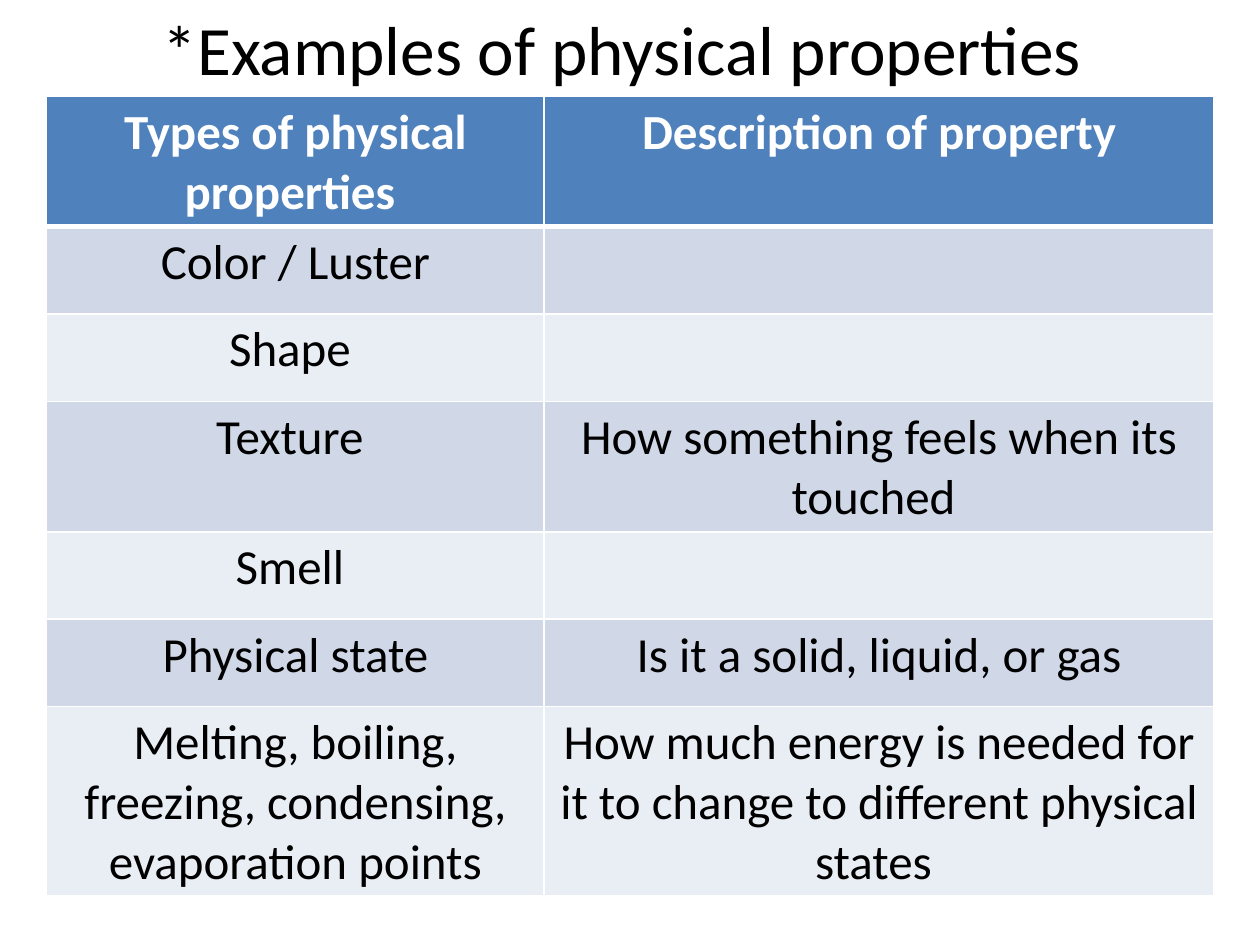
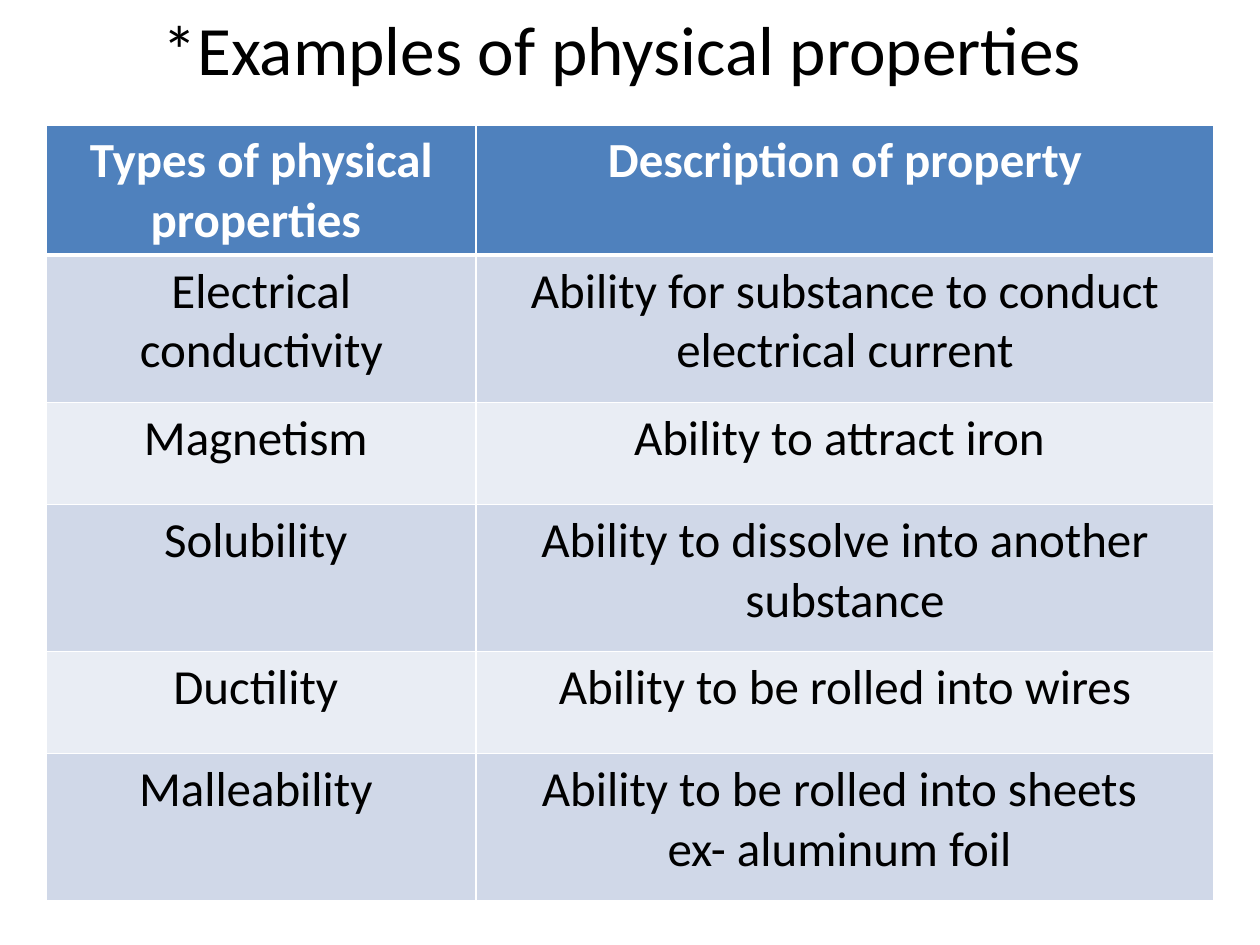
"""Build two slides with tables of physical properties."""
from dataclasses import dataclass

from lxml.etree import SubElement
from pptx import Presentation
from pptx.dml.color import RGBColor as Rgb
from pptx.enum.text import MSO_ANCHOR as Anchor, PP_ALIGN as Align
from pptx.oxml.ns import qn
from pptx.slide import Slide
from pptx.table import _Cell as Cell
from pptx.text.text import TextFrame as Frame
from pptx.util import Pt

HUES = {"head": "4F81BD", "odd": "D0D8E8", "even": "E9EDF4",
        "white": "FFFFFF", "black": "000000"}
FONT = "Calibri"
TITLE = "*Examples of physical properties "
HEADS = ("Types of physical properties ", "Description of property")
LEFT = 26.7


@dataclass(frozen=True)
class Row:
    high: float
    kind: str
    note: str = ""


@dataclass(frozen=True)
class Grid:
    top: float
    wide: tuple[float, float]
    head: float
    rows: tuple[Row, ...]


LOW, MID, TALL = 50, 69, 100
SMALL, LARGE = 58.3, 84.2

GRIDS = (
    Grid(55, (284.2, 382.8), MID, (
        Row(LOW, "Color / Luster"),
        Row(LOW, "Shape "),
        Row(MID, "Texture ", "How something feels when its touched "),
        Row(LOW, "Smell "),
        Row(LOW, "Physical state", "Is it a solid, liquid, or gas"),
        Row(TALL, "Melting, boiling, freezing, condensing, evaporation points",
            "How much energy is needed for it to change to different "
            "physical states "),
    )),
    Grid(71.3, (245.2, 421.8), SMALL, (
        Row(LARGE, "Electrical conductivity",
            "Ability for substance to conduct electrical current"),
        Row(SMALL, "Magnetism ", "Ability to attract iron "),
        Row(LARGE, "Solubility ", "Ability to dissolve into another substance"),
        Row(SMALL, "Ductility ", "Ability to be rolled into wires"),
        Row(LARGE, "Malleability ",
            "Ability to be rolled into sheets \nex- aluminum foil "),
    )),
)


def write(frame: Frame, text: str, size: float, hue: str, bold: bool) -> None:
    """Fill a frame with centred text in one style."""
    frame.text = text
    for para in frame.paragraphs:
        para.alignment = Align.CENTER
        font = para.font
        font.name, font.size, font.bold = FONT, Pt(size), bold
        font.color.rgb = Rgb.from_string(HUES[hue])


def edge(cell: Cell, side: str, width: float) -> None:
    """Draw one white border of a cell."""
    line = SubElement(cell._tc.get_or_add_tcPr(), qn(f"a:ln{side}"),
                      w=str(Pt(width)))
    fill = SubElement(line, qn("a:solidFill"))
    SubElement(fill, qn("a:srgbClr"), val=HUES["white"])


def add_title(slide: Slide) -> None:
    """Add the shared slide title."""
    frame = slide.shapes.add_textbox(Pt(36), 0, Pt(648), Pt(55)).text_frame
    frame.word_wrap = True
    frame.vertical_anchor = Anchor.MIDDLE
    write(frame, TITLE, 39.6, "black", False)


def add_grid(slide: Slide, grid: Grid) -> None:
    """Add a table with a header and striped rows."""
    rows = (Row(grid.head, *HEADS), *grid.rows)
    table = slide.shapes.add_table(
        len(rows), len(grid.wide), Pt(LEFT), Pt(grid.top),
        Pt(sum(grid.wide)), Pt(sum(row.high for row in rows))).table
    for col, wide in zip(table.columns, grid.wide):
        col.width = Pt(wide)
    for num, row in enumerate(rows):
        table.rows[num].height = Pt(row.high)
        head = num == 0
        band = "head" if head else "odd" if num % 2 else "even"
        sides = {"L": 1, "R": 1, "T": 3 if num == 1 else 1,
                 "B": 3 if head else 1}
        for col, text in enumerate((row.kind, row.note)):
            cell = table.cell(num, col)
            for side, width in sides.items():
                edge(cell, side, width)
            cell.fill.solid()
            cell.fill.fore_color.rgb = Rgb.from_string(HUES[band])
            write(cell.text_frame, text, 28, "white" if head else "black", head)


def main() -> None:
    """Build and save the deck."""
    deck = Presentation()
    deck.slide_width, deck.slide_height = Pt(720), Pt(540)
    for grid in GRIDS:
        slide = deck.slides.add_slide(deck.slide_layouts[6])
        add_title(slide)
        add_grid(slide, grid)
    deck.save("out.pptx")


if __name__ == "__main__":
    main()
